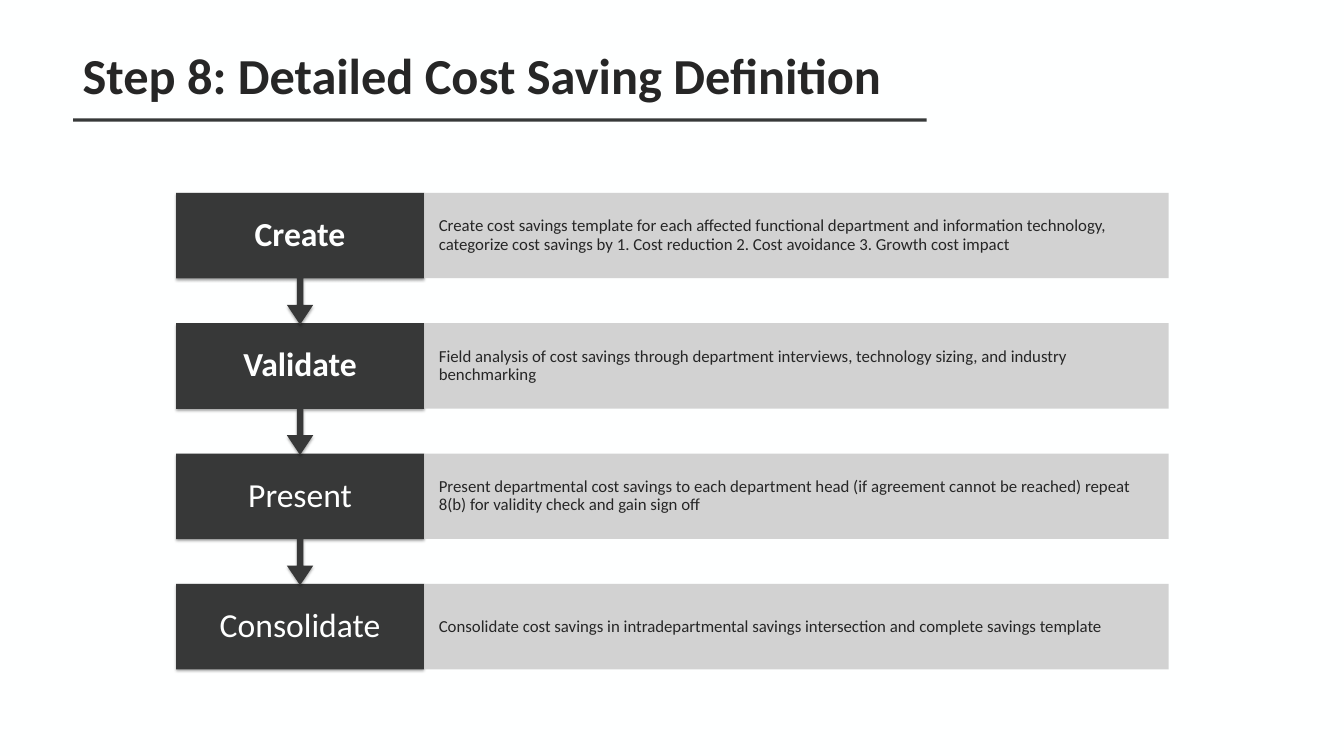
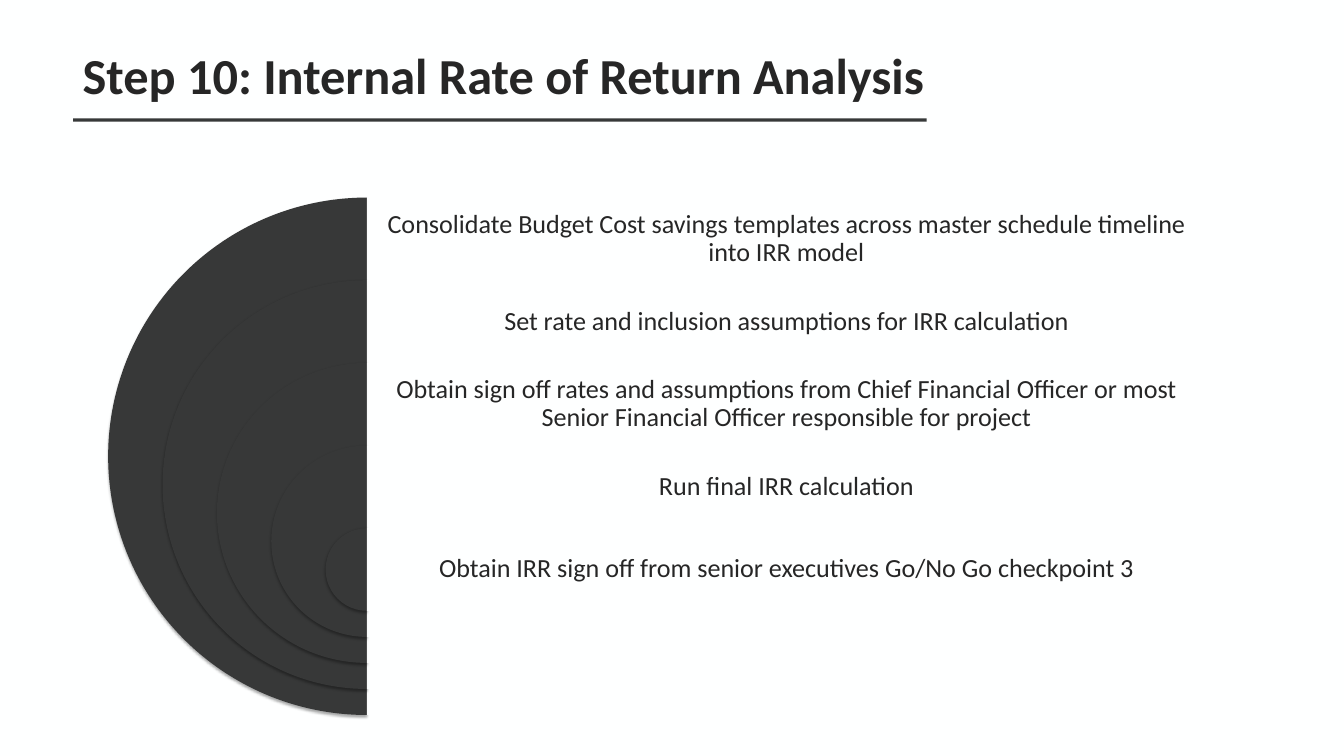
from lxml import etree
from pptx import Presentation
from pptx.dml.color import RGBColor
from pptx.enum import shapes, text
from pptx.oxml import ns
from pptx.util import Inches, Pt

FONT = "Calibri"
PAPER = RGBColor(0xFE, 0xFF, 0xFF)
INK = RGBColor(0x26, 0x26, 0x26)
DARK = RGBColor(0x37, 0x38, 0x38)
RULE = RGBColor(0x37, 0x39, 0x39)
GREY = RGBColor(0xCE, 0xCE, 0xCE)
SHAPE = shapes.MSO_SHAPE

# Process rows: name, bold name, description
STEPS = [
    ("Create", True,
     "Create cost savings template for each affected functional department and "
     "information technology, categorize cost savings by 1. Cost reduction "
     "2. Cost avoidance 3. Growth cost impact"),
    ("Validate", True,
     "Field analysis of cost savings through department interviews, "
     "technology sizing, and industry benchmarking"),
    ("Present", False,
     "Present departmental cost savings to each department head (if agreement "
     "cannot be reached) repeat 8(b) for validity check and gain sign off"),
    ("Consolidate", False,
     "Consolidate cost savings in intradepartmental savings intersection "
     "and complete savings template"),
]
ROW_TOP, ROW_PITCH, ROW_HEIGHT, CALLOUT_HEIGHT = 2.87, 1.94, 1.27, 1.96
NAME_LEFT, NAME_WIDTH, DETAIL_WIDTH = 2.62, 3.69, 11.08

IRR_TASKS = [
    "Consolidate Budget Cost savings templates across master schedule timeline "
    "into IRR model",
    "Set rate and inclusion assumptions for IRR calculation",
    "Obtain sign off rates and assumptions from Chief Financial Officer or most "
    "Senior Financial Officer responsible for project",
    "Run final IRR calculation",
    "Obtain IRR sign off from senior executives Go/No Go checkpoint 3",
]
PIE_CENTRE, PIE_TOP, OUTER, INNER = 5.46, 2.94, 7.7, 1.23
TASK_WIDTH = 12.48


def add_page(deck, title):
    """Add a slide with its title and the rule below it."""
    page = deck.slides.add_slide(deck.slide_layouts[5])
    add_block(page, SHAPE.RECTANGLE, 1.09, 1.76, 12.7, 0.05, RULE)
    heading = page.shapes.title
    heading.left, heading.top = Inches(1.13), Inches(0.61)
    heading.width, heading.height = Inches(17.29), Inches(0.99)
    write(heading, title, 54, INK, bold=True, align=text.PP_ALIGN.LEFT,
          anchor=text.MSO_ANCHOR.TOP, margins=(0.1, 0.05), spacing=1)
    return page


def add_block(page, kind, left, top, width, height, colour, opacity=100):
    block = page.shapes.add_shape(
        kind, Inches(left), Inches(top), Inches(width), Inches(height))
    block.shadow.inherit = False
    block.fill.solid()
    block.fill.fore_color.rgb = colour
    block.line.fill.background()
    if opacity < 100:
        set_opacity(block.fill._xPr.find(".//" + ns.qn("a:srgbClr")), opacity)
    return block


def set_opacity(colour, percent):
    etree.SubElement(colour, ns.qn("a:alpha"), val=str(percent * 1000))


def add_shadow(block, direction=90):
    effects = block.element.spPr.find(ns.qn("a:effectLst"))
    shadow = etree.SubElement(
        effects, ns.qn("a:outerShdw"), blurRad=str(Pt(3.1)),
        dist=str(Pt(1.8)), dir=str(direction * 60000), rotWithShape="0")
    colour = etree.SubElement(shadow, ns.qn("a:srgbClr"), val="000000")
    set_opacity(colour, 35)


def add_label(page, left, top, width, height, words, size, colour, **style):
    box = page.shapes.add_textbox(
        Inches(left), Inches(top), Inches(width), Inches(height))
    write(box, words, size, colour, **style)


def write(box, words, size, colour, bold=False, align=text.PP_ALIGN.CENTER,
          anchor=text.MSO_ANCHOR.MIDDLE, margins=(0.12, 0.12), spacing=0.9):
    """Fill a shape with one styled paragraph; margins are (side, top and bottom)."""
    frame = box.text_frame
    frame.text = words
    frame.word_wrap = True
    frame.auto_size = text.MSO_AUTO_SIZE.NONE
    frame.vertical_anchor = anchor
    frame.margin_left = frame.margin_right = Inches(margins[0])
    frame.margin_top = frame.margin_bottom = Inches(margins[1])
    para = frame.paragraphs[0]
    para.alignment = align
    para.line_spacing = spacing
    para.space_before = Pt(0)
    for span in para.runs:
        span.font.name = FONT
        span.font.size = Pt(size)
        span.font.bold = bold
        span.font.color.rgb = colour


def add_step(page, top, name, bold, detail, is_last):
    if is_last:
        block = add_block(page, SHAPE.RECTANGLE, NAME_LEFT, top,
                          NAME_WIDTH, ROW_HEIGHT, DARK)
        add_shadow(block)
    else:
        block = add_block(page, SHAPE.UP_ARROW_CALLOUT, NAME_LEFT, top,
                          NAME_WIDTH, CALLOUT_HEIGHT, DARK)
        block.rotation = 180
        for index, value in enumerate((0.05, 0.1, 0.15, 0.65)):
            block.adjustments[index] = value
        add_shadow(block)
    add_label(page, NAME_LEFT, top, NAME_WIDTH, ROW_HEIGHT, name, 36, PAPER,
              bold=bold, margins=(0.26, 0.28))
    panel = add_block(page, SHAPE.RECTANGLE, NAME_LEFT + NAME_WIDTH, top,
                      DETAIL_WIDTH, ROW_HEIGHT, GREY, opacity=90)
    write(panel, detail, 18, INK, align=text.PP_ALIGN.LEFT, margins=(0.22, 0.25))


def add_task(page, top, diameter, task):
    """Add a half disc, the panel to its right and the task in the panel's top band."""
    disc = add_block(page, SHAPE.PIE, PIE_CENTRE - diameter / 2, top,
                     diameter, diameter, DARK)
    disc.adjustments[0], disc.adjustments[1] = 54, 162
    add_shadow(disc)
    add_block(page, SHAPE.RECTANGLE, PIE_CENTRE, top, TASK_WIDTH, diameter,
              PAPER, opacity=90)
    add_label(page, PIE_CENTRE, top, TASK_WIDTH, INNER, task, 28, INK)


def build_saving_slide(deck):
    page = add_page(deck, "Step 8: Detailed Cost Saving Definition")
    last = len(STEPS) - 1
    # Bottom row first, so that each arrow lies over the row it points to
    for row in range(last, -1, -1):
        add_step(page, ROW_TOP + row * ROW_PITCH, *STEPS[row], is_last=row == last)


def build_return_slide(deck):
    page = add_page(deck, "Step 10: Internal Rate of Return Analysis")
    shrink = (OUTER - INNER) / (len(IRR_TASKS) - 1)
    for index, task in enumerate(IRR_TASKS):
        add_task(page, PIE_TOP + index * INNER, OUTER - index * shrink, task)


def main():
    deck = Presentation()
    deck.slide_width, deck.slide_height = Inches(20), Inches(11.25)
    backdrop = deck.slide_master.background.fill
    backdrop.solid()
    backdrop.fore_color.rgb = PAPER
    build_saving_slide(deck)
    build_return_slide(deck)
    deck.save("out.pptx")


if __name__ == "__main__":
    main()
